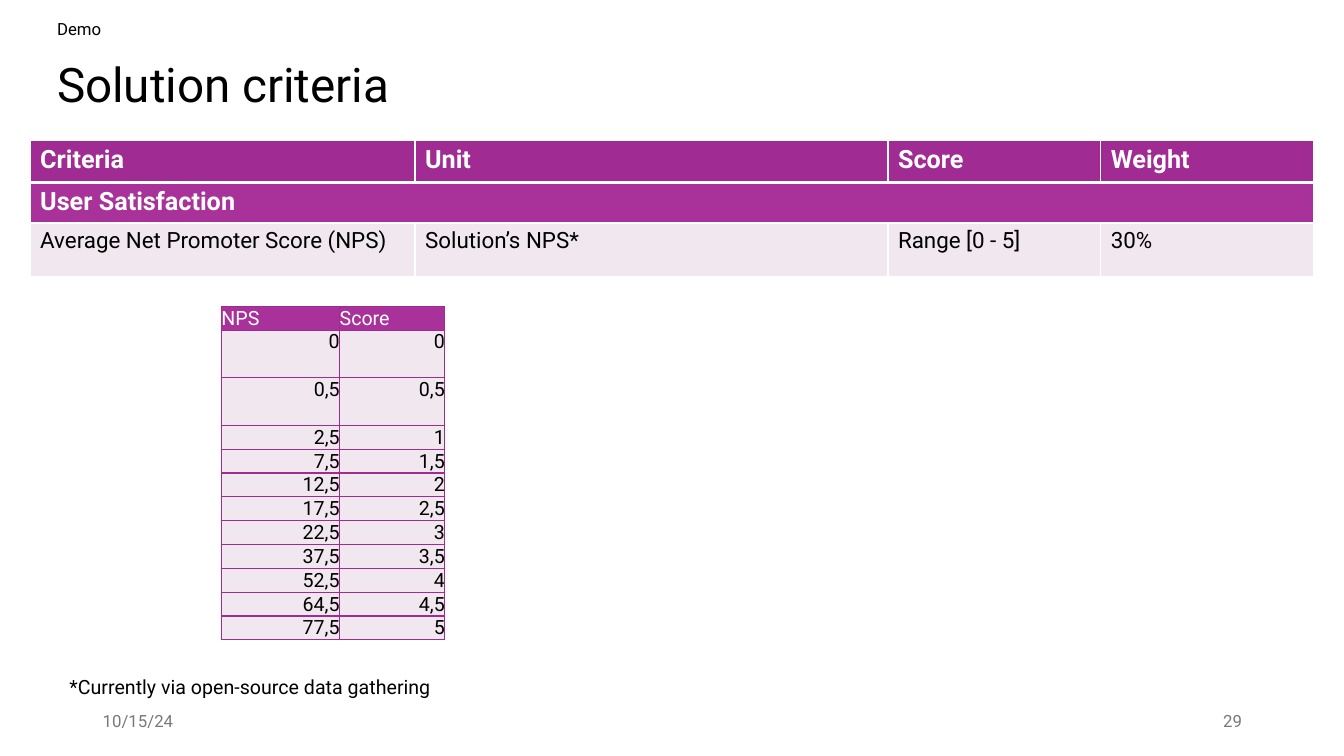
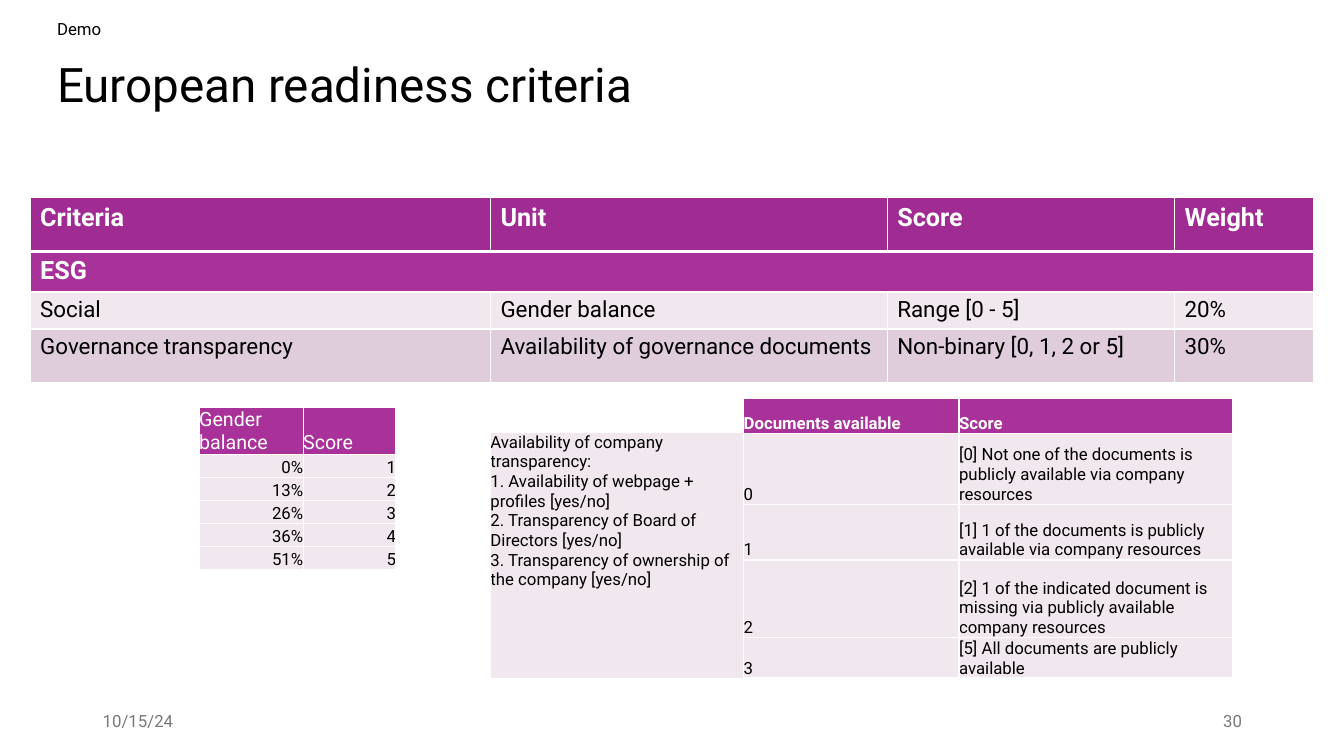
from dataclasses import dataclass, replace

import lxml.etree
import pptx
import pptx.dml.color
import pptx.enum.text
import pptx.oxml.ns
import pptx.util

Cm = pptx.util.Cm
Pt = pptx.util.Pt
RGBColor = pptx.dml.color.RGBColor
Align = pptx.enum.text.PP_ALIGN
Anchor = pptx.enum.text.MSO_ANCHOR

BLACK = RGBColor(0x00, 0x00, 0x00)
WHITE = RGBColor(0xFF, 0xFF, 0xFF)
GREY = RGBColor(0x79, 0x79, 0x79)
PURPLE = RGBColor(0xA0, 0x2B, 0x93)
LIGHT_PURPLE = RGBColor(0xA8, 0x31, 0x9A)
PALE = RGBColor(0xF0, 0xE8, 0xEE)
PALE_DARK = RGBColor(0xDF, 0xCD, 0xDC)


@dataclass(frozen=True)
class RowStyle:
    fill: RGBColor
    size: float
    color: RGBColor = BLACK
    bold: bool = False
    align: Align = Align.LEFT
    anchor: Anchor = Anchor.TOP
    padded: bool = False
    top: float = 1
    bottom: float = 1


HEADER = RowStyle(PURPLE, 18, WHITE, bold=True, padded=True, bottom=3)
SECTION = replace(HEADER, fill=LIGHT_PURPLE, top=3, bottom=1)
BODY = RowStyle(PALE, 16, padded=True)
BODY_DARK = replace(BODY, fill=PALE_DARK)
SCALE_HEADER = RowStyle(LIGHT_PURPLE, 14, WHITE, anchor=Anchor.BOTTOM)
SCALE_TOP = RowStyle(PALE, 14, align=Align.RIGHT)
SCALE = replace(SCALE_TOP, anchor=Anchor.BOTTOM)
SMALL_SCALE = replace(SCALE, size=12)
DOCUMENT_HEADER = replace(SCALE_HEADER, size=12, bold=True)
DOCUMENT = replace(SMALL_SCALE, align=Align.LEFT)
NOTE = replace(DOCUMENT, anchor=Anchor.TOP)


class Deck:
    font_name = "Roboto"
    section = "Demo"
    date = "10/15/24"

    def __init__(self):
        self.presentation = pptx.Presentation()
        self.presentation.slide_width = Cm(33.87)
        self.presentation.slide_height = Cm(19.05)
        self.slide = None

    def add_slide(self, title, number):
        """Start a slide with its section label, title and footer."""
        layout = self.presentation.slide_layouts[6]
        self.slide = self.presentation.slides.add_slide(layout)
        self.text(self.section, 1.19, 0.41, 31.5, 0.71, line_spacing=0.9)
        self.text(title, 1.19, 1.12, 31.5, 2.16, size=34,
                  anchor=Anchor.MIDDLE, line_spacing=0.9)
        for text, left, align in ((self.date, 2.34, Align.LEFT),
                                  (str(number), 23.93, Align.RIGHT)):
            self.text(text, left, 17.65, 7.62, 1.02, color=GREY,
                      align=align, anchor=Anchor.MIDDLE)

    def style(self, paragraph, size, color, align, bold=False):
        paragraph.alignment = align
        paragraph.font.name = self.font_name
        paragraph.font.size = Pt(size)
        paragraph.font.bold = bold
        paragraph.font.color.rgb = color

    def text(self, text, left, top, width, height, size=12, color=BLACK,
             align=Align.LEFT, anchor=Anchor.TOP, line_spacing=1.0):
        shape = self.slide.shapes.add_textbox(
            Cm(left), Cm(top), Cm(width), Cm(height))
        frame = shape.text_frame
        frame.word_wrap = True
        frame.vertical_anchor = anchor
        paragraph = frame.paragraphs[0]
        paragraph.text = text
        paragraph.line_spacing = line_spacing
        self.style(paragraph, size, color, align)

    def border(self, cell, side, width, color):
        qn = pptx.oxml.ns.qn
        properties = cell._tc.get_or_add_tcPr()
        line = lxml.etree.SubElement(
            properties, qn("a:ln" + side), w=str(Pt(width)))
        fill = lxml.etree.SubElement(line, qn("a:solidFill"))
        lxml.etree.SubElement(fill, qn("a:srgbClr"), val=str(color))

    def cell(self, cell, text, style, border_color):
        widths = {"L": 1, "R": 1, "T": style.top, "B": style.bottom}
        for side, width in widths.items():
            self.border(cell, side, width, border_color)
        cell.fill.solid()
        cell.fill.fore_color.rgb = style.fill
        cell.vertical_anchor = style.anchor
        if not style.padded:
            cell.margin_left = cell.margin_right = 0
            cell.margin_top = cell.margin_bottom = 0
        cell.text = text
        for paragraph in cell.text_frame.paragraphs:
            self.style(paragraph, style.size, style.color, style.align,
                       style.bold)

    def table(self, left, top, widths, rows, border_color=WHITE):
        """Add a table; each row is (height, style, texts).

        A row with fewer texts than columns merges its last text to the end.
        """
        frame = self.slide.shapes.add_table(
            len(rows), len(widths), Cm(left), Cm(top), Cm(sum(widths)),
            Cm(sum(height for height, _, _ in rows)))
        table = frame.table
        table.first_row = False
        table.horz_banding = False
        for column, width in zip(table.columns, widths):
            column.width = Cm(width)
        last = len(widths) - 1
        for index, (height, style, texts) in enumerate(rows):
            table.rows[index].height = Cm(height)
            for column in range(len(widths)):
                text = texts[column] if column < len(texts) else ""
                self.cell(table.cell(index, column), text, style,
                          border_color)
            if len(texts) <= last:
                table.cell(index, len(texts) - 1).merge(
                    table.cell(index, last))

    def criteria(self, top, widths, header_height, section, rows):
        """Add the wide table of criteria under one section heading."""
        headings = ("Criteria", "Unit", "Score", "Weight")
        self.table(0.76, top, widths, [
            (header_height, HEADER, headings),
            (1.0, SECTION, (section,)), *rows])


def solution_slide(deck):
    deck.add_slide("Solution criteria", 29)
    deck.criteria(3.54, (9.7, 11.92, 5.36, 5.36), 1.06, "User Satisfaction", [
        (1.36, BODY, ("Average Net Promoter Score (NPS)", "Solution’s NPS*",
                      "Range [0 - 5]", "30%"))])
    thresholds = (("2,5", "1"), ("7,5", "1,5"), ("12,5", "2"),
                  ("17,5", "2,5"), ("22,5", "3"), ("37,5", "3,5"),
                  ("52,5", "4"), ("64,5", "4,5"), ("77,5", "5"))
    deck.table(5.58, 7.72, (2.98, 2.65), [
        (0.6, SCALE_HEADER, ("NPS", "Score")),
        (1.2, SCALE_TOP, ("0", "0")),
        (1.2, SCALE_TOP, ("0,5", "0,5")),
        *((0.6, SCALE, pair) for pair in thresholds)], PURPLE)
    deck.text("*Currently via open-source data gathering",
              1.5, 16.89, 10.74, 0.86, size=14)


def readiness_slide(deck):
    deck.add_slide("European readiness criteria", 30)
    deck.criteria(4.98, (11.6, 10.0, 7.24, 3.5), 1.36, "ESG", [
        (0.9, BODY, ("Social", "Gender balance", "Range [0 - 5]", "20%")),
        (1.36, BODY_DARK, ("Governance transparency",
                           "Availability of governance documents",
                           "Non-binary [0, 1, 2 or 5]", "30%"))])
    shares = ("0%", "13%", "26%", "36%", "51%")
    deck.table(5.02, 10.27, (2.62, 2.34), [
        (1.19, SCALE_HEADER, ("Gender balance", "Score")),
        *((0.58, SMALL_SCALE, (share, str(score)))
          for score, share in enumerate(shares, 1))])
    outcomes = (
        (1.78, "[0] Not one of the documents is publicly available "
               "via company resources"),
        (1.4, "[1] 1 of the documents is publicly available "
              "via company resources"),
        (1.96, "[2] 1 of the indicated document is missing "
               "via publicly available company resources"),
        (0.98, "[5] All documents are publicly available"))
    deck.table(18.74, 10.05, (5.43, 6.9), [
        (0.88, DOCUMENT_HEADER, ("Documents available", "Score")),
        *((height, DOCUMENT, (str(count), outcome))
          for count, (height, outcome) in enumerate(outcomes))])
    questions = ("Availability of company transparency:",
                 "1. Availability of webpage + profiles [yes/no]",
                 "2. Transparency of Board of Directors [yes/no]",
                 "3. Transparency of ownership of the company [yes/no]")
    deck.table(12.36, 10.9, (6.38,), [(6.2, NOTE, ("\n".join(questions),))])


def main():
    deck = Deck()
    solution_slide(deck)
    readiness_slide(deck)
    deck.presentation.save("out.pptx")


if __name__ == "__main__":
    main()
